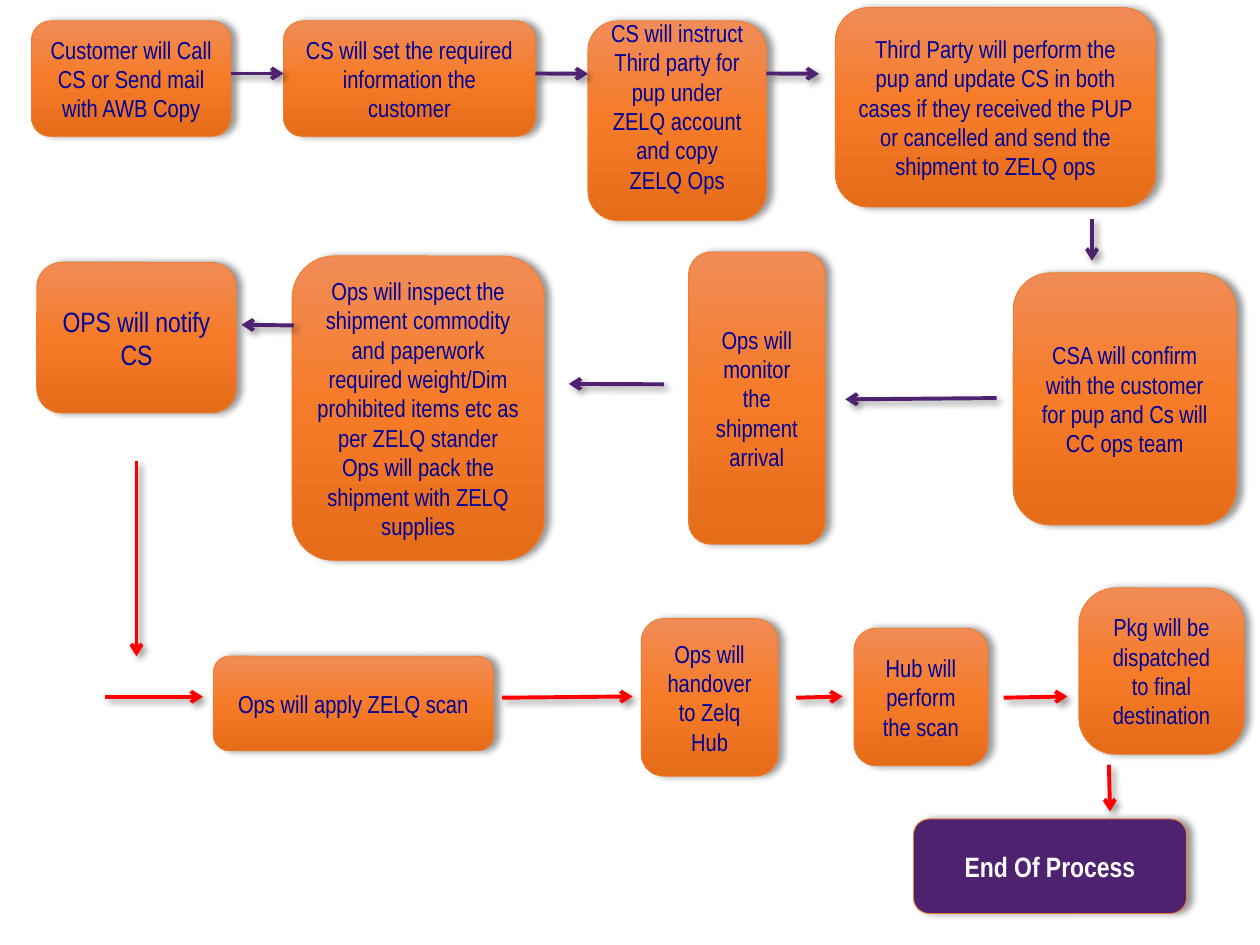
from copy import deepcopy
from dataclasses import dataclass

from lxml.etree import SubElement
from pptx import Presentation
from pptx.dml.color import RGBColor
from pptx.enum.shapes import MSO_CONNECTOR, MSO_SHAPE
from pptx.enum.text import MSO_ANCHOR, PP_ALIGN
from pptx.oxml.ns import qn
from pptx.slide import Slide
from pptx.util import Pt


@dataclass(frozen=True)
class Theme:
    font: str = "Arial Narrow"
    body_size: float = 14
    large_size: float = 16
    text: str = "000099"
    light_text: str = "FFFFFF"
    gradient: tuple[str, ...] = ("F18C57", "F67B28", "E56C19")
    outline: str = "ED7D31"
    purple: str = "4F2270"
    red: str = "FF0000"


THEME = Theme()


@dataclass(frozen=True)
class Step:
    text: str
    left: float
    top: float
    width: float
    height: float
    size: float = THEME.body_size
    corner: float = 0.1667
    is_end: bool = False
    top_inset: float = 3.6
    bottom_inset: float = 3.6


@dataclass(frozen=True)
class Arrow:
    start: tuple[float, float]
    end: tuple[float, float]
    color: str = THEME.purple


STEPS = [
    Step("Customer will Call CS or Send mail with AWB Copy", 18, 12, 114, 66),
    Step("CS will set the required information the customer", 162, 12, 144, 66),
    Step("CS will instruct Third party for pup under ZELQ account and copy ZELQ Ops",
         336, 12, 102, 114, top_inset=0, bottom_inset=16.8),
    Step("Third Party will perform the pup and update CS in both cases if they "
         "received the PUP or cancelled and send the shipment to ZELQ ops",
         477.4, 4.3, 183, 114),
    Step("CSA will confirm with the customer for pup and Cs will CC ops team",
         579, 156, 127.5, 144),
    Step("Ops will monitor the shipment arrival", 393.5, 144, 78, 167),
    Step("Ops will inspect the shipment commodity and paperwork required weight/Dim "
         "prohibited items etc as per ZELQ stander Ops will pack the shipment with "
         "ZELQ supplies", 167, 146.3, 144, 174),
    Step("OPS will notify CS", 21, 150, 114, 86, size=THEME.large_size),
    Step("Ops will apply ZELQ scan", 122, 375, 160, 54),
    Step("Ops will handover to Zelq Hub", 366.5, 353.5, 78, 90),
    Step("Hub will perform the scan", 488, 359, 76.5, 78.5),
    Step("Pkg will be dispatched to final destination", 616.5, 336, 94.5, 95,
         corner=0.224),
    Step("End Of Process", 522, 468, 156, 54, size=THEME.large_size, is_end=True),
]

ARROWS = [
    Arrow((132, 42), (162, 42)),
    Arrow((306, 42), (336, 42.2)),
    Arrow((438, 42), (468, 42.2)),
    Arrow((624, 125), (624, 149)),
    Arrow((569.5, 227.5), (483, 228.2)),
    Arrow((379.5, 219.6), (325, 219.4)),
    Arrow((168, 186), (138, 185.6)),
    Arrow((78, 263.5), (78, 375), THEME.red),
    Arrow((60, 398.2), (116, 398.2), THEME.red),
    Arrow((287, 398.7), (361.5, 398), THEME.red),
    Arrow((455, 398.7), (481.5, 398), THEME.red),
    Arrow((573.5, 398.7), (610, 398), THEME.red),
    Arrow((633.7, 437), (634.3, 463.7), THEME.red),
]


def add_shadow(properties, degrees: int) -> None:
    effects = SubElement(properties, qn("a:effectLst"))
    shadow = SubElement(effects, qn("a:outerShdw"), blurRad=str(Pt(4)),
                        dist=str(Pt(3)), dir=str(degrees * 60000),
                        algn="tl", rotWithShape="0")
    color = SubElement(shadow, qn("a:srgbClr"), val="000000")
    SubElement(color, qn("a:alpha"), val="40000")


def fill_gradient(shape) -> None:
    """Fill from top to bottom with evenly spaced theme colours."""
    fill = shape.fill
    fill.gradient()
    fill.gradient_angle = 270
    stop_list = shape._element.spPr.find(".//" + qn("a:gsLst"))
    stop_list.append(deepcopy(stop_list[0]))
    for index, (stop, color) in enumerate(zip(fill.gradient_stops, THEME.gradient)):
        stop.position = index / 2
        stop.color.rgb = RGBColor.from_string(color)


def add_step(slide: Slide, step: Step) -> None:
    shape = slide.shapes.add_shape(
        MSO_SHAPE.ROUNDED_RECTANGLE,
        Pt(step.left), Pt(step.top), Pt(step.width), Pt(step.height))
    shape.adjustments[0] = step.corner
    if step.is_end:
        shape.fill.solid()
        shape.fill.fore_color.rgb = RGBColor.from_string(THEME.purple)
    else:
        fill_gradient(shape)
    shape.line.color.rgb = RGBColor.from_string(THEME.outline)
    shape.line.width = Pt(0.5)
    add_shadow(shape._element.spPr, 0)

    frame = shape.text_frame
    frame.word_wrap = True
    frame.vertical_anchor = MSO_ANCHOR.MIDDLE
    frame.margin_top = Pt(step.top_inset)
    frame.margin_bottom = Pt(step.bottom_inset)
    paragraph = frame.paragraphs[0]
    paragraph.text = step.text
    paragraph.alignment = PP_ALIGN.CENTER
    paragraph.font.name = THEME.font
    paragraph.font.size = Pt(step.size)
    paragraph.font.bold = step.is_end
    paragraph.font.color.rgb = RGBColor.from_string(
        THEME.light_text if step.is_end else THEME.text)


def add_arrow(slide: Slide, arrow: Arrow) -> None:
    connector = slide.shapes.add_connector(
        MSO_CONNECTOR.STRAIGHT, *map(Pt, arrow.start + arrow.end))
    connector.line.color.rgb = RGBColor.from_string(arrow.color)
    connector.line.width = Pt(2.25)
    properties = connector._element.spPr
    SubElement(properties.find(qn("a:ln")), qn("a:tailEnd"), type="arrow")
    add_shadow(properties, 45)


def main() -> None:
    presentation = Presentation()
    presentation.slide_width, presentation.slide_height = Pt(720), Pt(540)
    slide = presentation.slides.add_slide(presentation.slide_layouts[6])
    for step in STEPS:
        add_step(slide, step)
    for arrow in ARROWS:
        add_arrow(slide, arrow)
    presentation.save("out.pptx")


if __name__ == "__main__":
    main()
